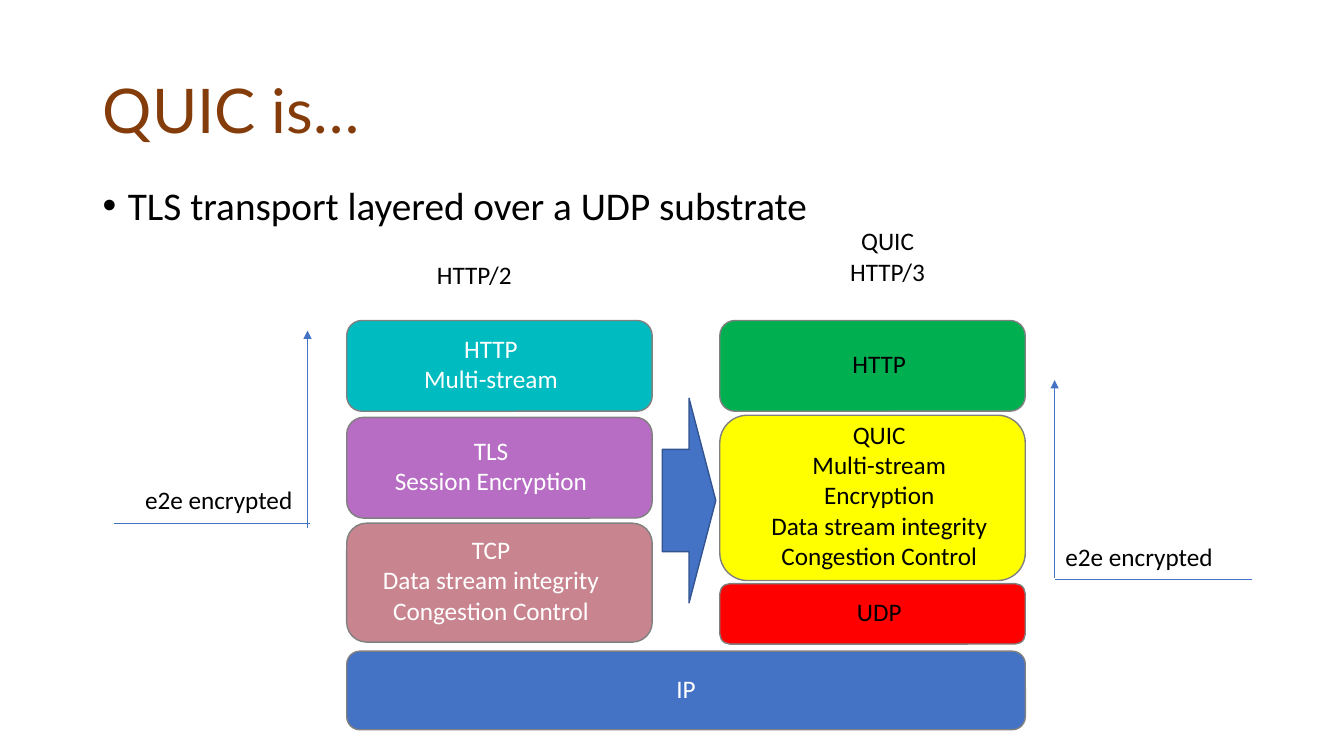
from dataclasses import dataclass

from lxml import etree
from pptx import Presentation
from pptx.dml.color import RGBColor as RGB
from pptx.enum.shapes import MSO_CONNECTOR as CONN, MSO_SHAPE as SHAPE
from pptx.enum.text import MSO_ANCHOR as ANCHOR, MSO_AUTO_SIZE as AUTO, PP_ALIGN as ALIGN
from pptx.oxml.ns import qn
from pptx.util import Inches, Pt


@dataclass(frozen=True)
class Theme:
    title: str = "843C0B"
    dark: str = "000000"
    light: str = "FFFFFF"
    blue: str = "4472C4"
    arrow_edge: str = "325491"
    edge: str = "808080"
    rose: str = "C8858F"
    purple: str = "B66DC3"
    teal: str = "00BCC0"
    green: str = "00B050"
    red: str = "FF0000"
    yellow: str = "FFFF00"
    title_font: str = "Lato"
    font: str = "Calibri"
    title_size: int = 44
    body_size: int = 28
    label_size: int = 18


def write(tf, text, font, size, color, align=ALIGN.LEFT, spacing=None):
    for i, line in enumerate(text.split("\n")):
        p = tf.paragraphs[0] if i == 0 else tf.add_paragraph()
        p.alignment = align
        p.line_spacing = spacing
        r = p.add_run()
        r.text = line
        r.font.name, r.font.size = font, Pt(size)
        r.font.color.rgb = RGB.from_string(color)


class Deck:
    COLS = ROWS = 100
    LINE_ROWS, PAD_ROWS = 4.06, 1.33
    LABEL_LIFT = 0.25

    def __init__(self, theme):
        self.theme = theme
        self.prs = Presentation()
        self.prs.slide_width, self.prs.slide_height = Inches(13.33), Inches(7.5)
        self.slide = self.prs.slides.add_slide(self.prs.slide_layouts[5])

    def x(self, cols):
        return round(self.prs.slide_width * cols / self.COLS)

    def y(self, rows):
        return round(self.prs.slide_height * rows / self.ROWS)

    def area(self, left, top, width, height):
        return self.x(left), self.y(top), self.x(width), self.y(height)

    def title(self, text, *area):
        sp = self.slide.shapes.title
        sp.left, sp.top, sp.width, sp.height = self.area(*area)
        tf = sp.text_frame
        tf.word_wrap, tf.auto_size = True, AUTO.NONE
        tf.vertical_anchor = ANCHOR.MIDDLE
        th = self.theme
        write(tf, text, th.title_font, th.title_size, th.title, spacing=0.9)

    def bullet(self, text, *area):
        tf = self.slide.shapes.add_textbox(*self.area(*area)).text_frame
        tf.word_wrap = True
        th = self.theme
        write(tf, text, th.font, th.body_size, th.dark, spacing=0.9)
        p = tf.paragraphs[0]
        p.space_before = Pt(10)
        pPr = p._p.get_or_add_pPr()
        pPr.set("marL", str(Inches(0.25)))
        pPr.set("indent", str(Inches(-0.25)))
        etree.SubElement(pPr, qn("a:buFont")).set("typeface", "Arial")
        etree.SubElement(pPr, qn("a:buChar")).set("char", "•")

    def label(self, text, center, middle, width, color):
        height = self.PAD_ROWS + self.LINE_ROWS * len(text.split("\n"))
        area = self.area(center - width / 2, middle - height / 2, width, height)
        tf = self.slide.shapes.add_textbox(*area).text_frame
        tf.word_wrap, tf.auto_size = False, AUTO.SHAPE_TO_FIT_TEXT
        th = self.theme
        write(tf, text, th.font, th.label_size, color, ALIGN.CENTER)

    def shape(self, kind, area, fill, edge):
        sp = self.slide.shapes.add_shape(kind, *self.area(*area))
        sp.shadow.inherit = False
        sp.fill.solid()
        sp.fill.fore_color.rgb = RGB.from_string(fill)
        sp.line.color.rgb = RGB.from_string(edge)
        sp.line.width = Pt(1)

    def layer(self, text, area, fill, color, center, width):
        self.shape(SHAPE.ROUNDED_RECTANGLE, area, fill, self.theme.edge)
        middle = area[1] + area[3] / 2 - self.LABEL_LIFT
        self.label(text, center, middle, width, color)

    def line(self, x1, y1, x2, y2, arrow=False):
        sp = self.slide.shapes.add_connector(
            CONN.STRAIGHT, self.x(x1), self.y(y1), self.x(x2), self.y(y2))
        sp.line.color.rgb = RGB.from_string(self.theme.blue)
        sp.line.width = Pt(0.5)
        if arrow:
            etree.SubElement(sp.line._get_or_add_ln(), qn("a:tailEnd")).set("type", "triangle")
        etree.SubElement(sp._element.spPr, qn("a:effectLst"))


def main():
    th = Theme()
    deck = Deck(th)
    deck.title("QUIC is…", 6.9, 5.33, 86.27, 19.33)
    deck.bullet("TLS transport layered over a UDP substrate", 6.9, 24, 86.27, 63.47)

    http2_left, http3_left, stack_width = 25.8, 53.56, 22.73
    ip_width = http3_left + stack_width - http2_left
    deck.layer("IP", (http2_left, 86.13, ip_width, 10.4), th.blue, th.light,
               http2_left + ip_width / 2, 2.93)

    http2 = [
        ("TCP\nData stream integrity\nCongestion Control", 69.2, 15.73, th.rose, 17.77),
        ("TLS\nSession Encryption", 55.2, 13.33, th.purple, 15.98),
        ("HTTP\nMulti-stream", 42.4, 12, th.teal, 11.55),
    ]
    http3 = [
        ("HTTP", 42.4, 12, th.green, 5.55),
        ("UDP", 77.2, 8, th.red, 4.88),
        ("QUIC\nMulti-stream\nEncryption\nData stream integrity\nCongestion Control",
         54.93, 21.87, th.yellow, 17.77),
    ]
    stacks = [(http2, http2_left, 36.53, th.light), (http3, http3_left, 65.42, th.dark)]
    for layers, left, center, color in stacks:
        for text, top, height, fill, width in layers:
            deck.layer(text, (left, top, stack_width, height), fill, color, center, width)

    deck.label("HTTP/2", 35.29, 36.4, 7.13, th.dark)
    deck.label("QUIC\nHTTP/3", 66.04, 33.93, 7.13, th.dark)
    deck.shape(SHAPE.RIGHT_ARROW, (49.28, 52.67, 3.98, 27.07), th.blue, th.arrow_edge)

    spans = [
        (23.1, 8.48, 69.2, 22.88, 69.87, 43.73, 16.28, 66.13),
        (93.17, 78.47, 76.67, 78.47, 76.4, 50.27, 84.76, 73.6),
    ]
    for start, end, base, arrow_x, bottom, top, center, middle in spans:
        deck.line(start, base, end, base)
        deck.line(arrow_x, bottom, arrow_x, top, arrow=True)
        deck.label("e2e encrypted", center, middle, 12.6, th.dark)

    deck.prs.save("out.pptx")


if __name__ == "__main__":
    main()
